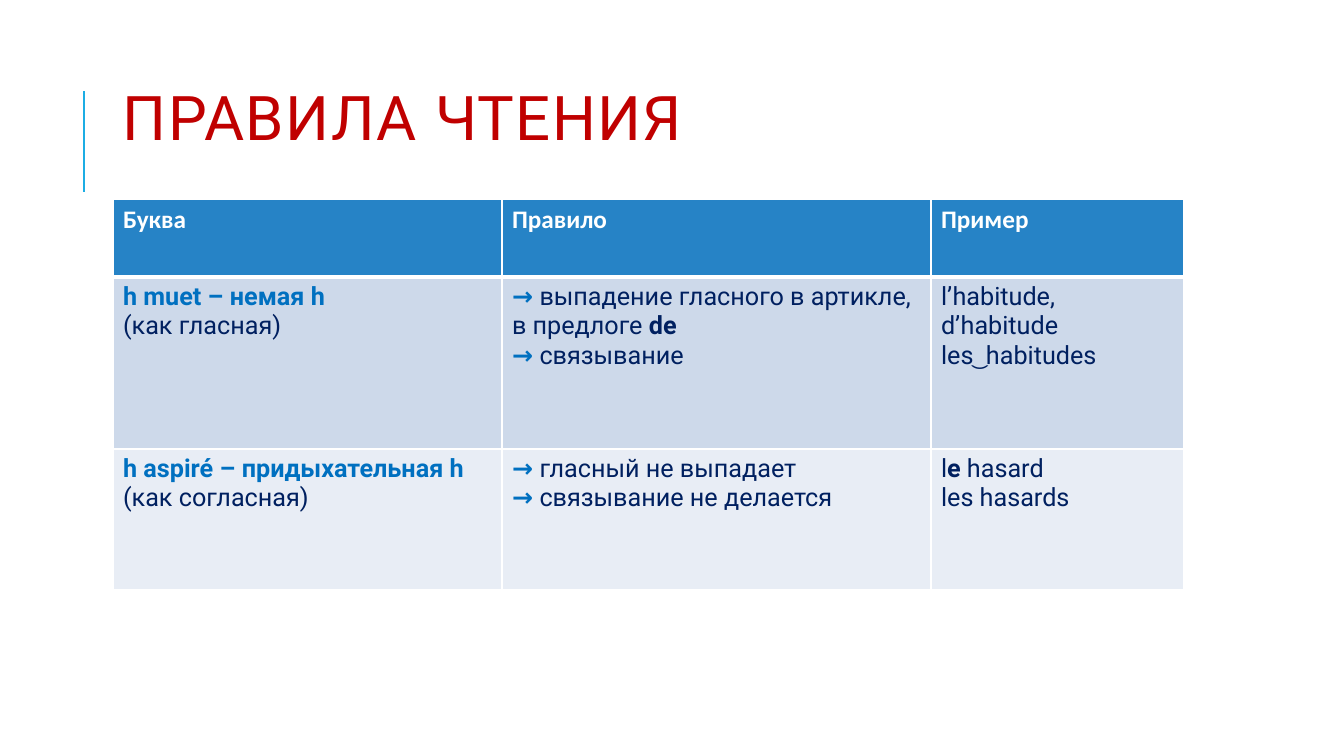
from lxml import etree
from pptx import Presentation
from pptx import util as u
from pptx.dml.color import RGBColor
from pptx.enum import shapes, text
from pptx.oxml import ns

PX = 914400 / 100.8

WHITE = RGBColor(0xFF, 0xFF, 0xFF)
RED = RGBColor(0xC0, 0x00, 0x00)
CYAN = RGBColor(0x1C, 0xAD, 0xE4)
BLUE = RGBColor(0x00, 0x70, 0xC0)
NAVY = RGBColor(0x00, 0x20, 0x60)
HEADER_FILL = RGBColor(0x26, 0x83, 0xC6)
ROW_FILLS = [HEADER_FILL, RGBColor(0xCD, 0xD9, 0xEA), RGBColor(0xE8, 0xED, 0xF5)]

TITLE = {"name": "Roboto", "size": u.Pt(44), "bold": False, "color": RED}
HEADER = {"name": "Calibri", "size": u.Pt(18), "bold": True, "color": WHITE}
PLAIN = {"name": "Roboto", "size": u.Pt(18), "bold": False, "color": NAVY}
STRONG = {**PLAIN, "bold": True}
ACCENT = {**STRONG, "color": BLUE}

ARROW = ("→ ", ACCENT)
COLUMNS = [389, 429, 253]
ROWS = [78, 172, 141]
CELLS = [
    [[[(name, HEADER)]] for name in ("Буква", "Правило", "Пример")],
    [
        [[("h muet – немая h", ACCENT)], [("(как гласная)", PLAIN)]],
        [
            [ARROW, ("выпадение гласного в артикле, в предлоге ", PLAIN), ("de", STRONG)],
            [ARROW, ("связывание", PLAIN)],
        ],
        [[("l’habitude, d’habitude", PLAIN)], [("les ͜ habitudes", PLAIN)]],
    ],
    [
        [[("h aspiré – придыхательная h", ACCENT)], [("(как согласная)", PLAIN)]],
        [
            [ARROW, ("гласный не выпадает", PLAIN)],
            [ARROW, ("связывание не делается", PLAIN)],
        ],
        [
            [("l", PLAIN), ("e", STRONG), (" hasard", PLAIN)],
            [("les hasards", PLAIN)],
        ],
    ],
]


def px(length):
    return u.Emu(round(length * PX))


def add_span(para, words, style):
    span = para.add_run()
    span.text = words
    for key, value in style.items():
        if key == "color":
            span.font.color.rgb = value
        else:
            setattr(span.font, key, value)
    return span


def fill_text(frame, paragraphs):
    for index, spans in enumerate(paragraphs):
        para = frame.add_paragraph() if index else frame.paragraphs[0]
        for words, style in spans:
            add_span(para, words, style)


def add_title(page, words, left, top, width, height):
    box = page.shapes.add_textbox(px(left), px(top), px(width), px(height))
    frame = box.text_frame
    frame.word_wrap = True
    frame.vertical_anchor = text.MSO_ANCHOR.MIDDLE
    para = frame.paragraphs[0]
    para.line_spacing = 0.8
    span = add_span(para, words, TITLE)
    span.font._element.set("spc", "100")


def add_rule(page, x, start, end):
    rule = page.shapes.add_connector(
        shapes.MSO_CONNECTOR.STRAIGHT, px(x), px(start), px(x), px(end)
    )
    rule.line.color.rgb = CYAN
    rule.line.width = u.Pt(1.5)
    etree.SubElement(rule._element.spPr, ns.qn("a:effectLst"))


def set_borders(cell, widths):
    properties = cell._tc.get_or_add_tcPr()
    for index, (side, points) in enumerate(widths.items()):
        border = etree.Element(ns.qn(f"a:ln{side}"), w=str(u.Pt(points)))
        solid = etree.SubElement(border, ns.qn("a:solidFill"))
        etree.SubElement(solid, ns.qn("a:srgbClr"), val=str(WHITE))
        properties.insert(index, border)


def add_rules_table(page, left, top):
    frame = page.shapes.add_table(
        len(ROWS), len(COLUMNS), px(left), px(top), px(sum(COLUMNS)), px(sum(ROWS))
    )
    table = frame.table
    for column, width in zip(table.columns, COLUMNS):
        column.width = px(width)
    for row, height in zip(table.rows, ROWS):
        row.height = px(height)
    for r, contents in enumerate(CELLS):
        for c, paragraphs in enumerate(contents):
            cell = table.cell(r, c)
            cell.fill.solid()
            cell.fill.fore_color.rgb = ROW_FILLS[r]
            fill_text(cell.text_frame, paragraphs)
            set_borders(cell, {"L": 1, "R": 1, "T": 3 if r == 1 else 1, "B": 3 if r == 0 else 1})


def main():
    deck = Presentation()
    deck.slide_width = px(1344)
    deck.slide_height = px(756)
    page = deck.slides.add_slide(deck.slide_layouts[6])
    add_rule(page, 84, 192, 91)
    add_title(page, "ПРАВИЛА ЧТЕНИЯ", 113, 59, 1071, 128)
    add_rules_table(page, 113, 199)
    deck.save("out.pptx")


if __name__ == "__main__":
    main()
